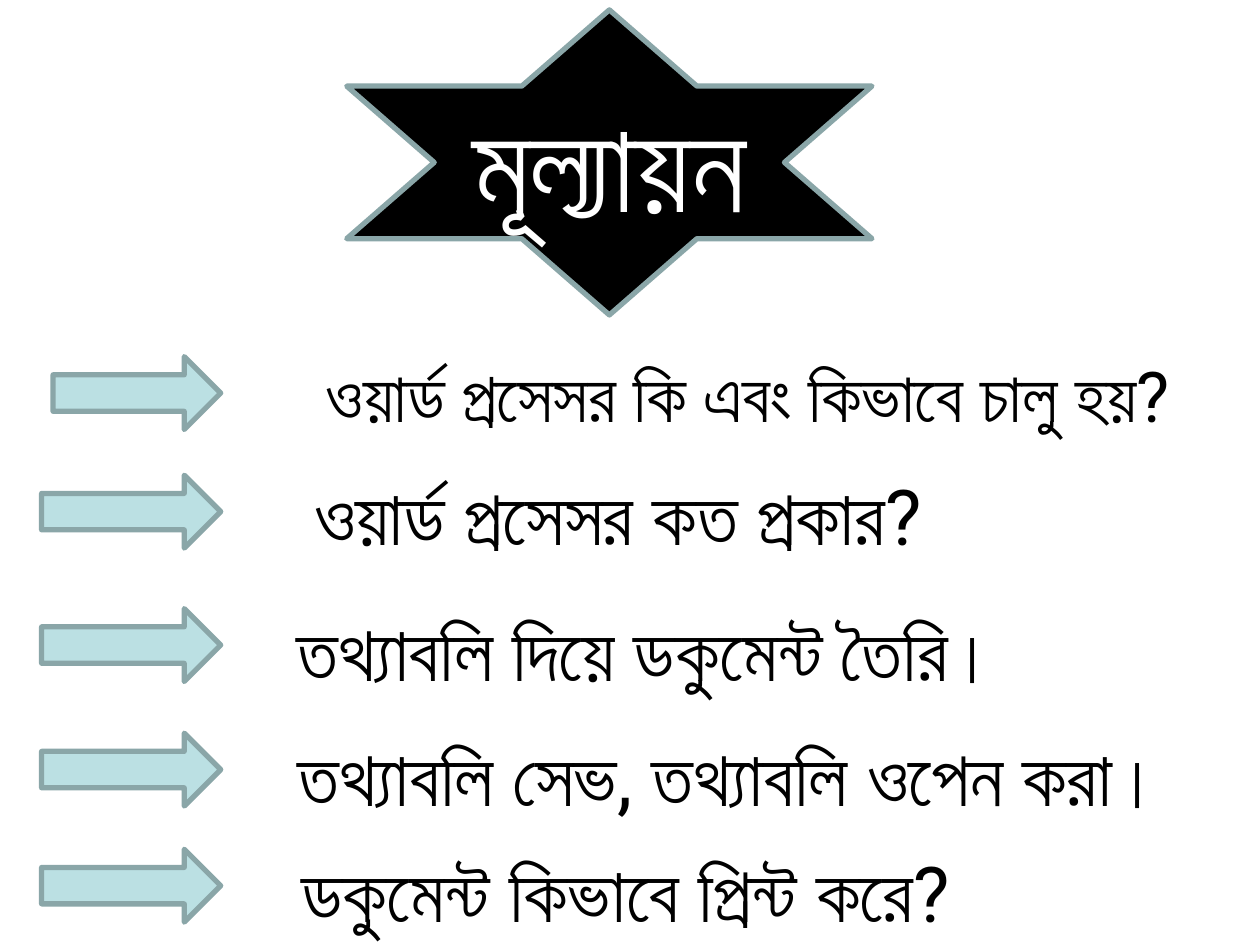
"""Build a Bengali evaluation slide with a star heading and five arrowed questions."""
from dataclasses import dataclass

import lxml.etree
import pptx
import pptx.dml.color
import pptx.enum.shapes
import pptx.enum.text
import pptx.oxml.ns
import pptx.util

Cm = pptx.util.Cm
Pt = pptx.util.Pt
SHAPE = pptx.enum.shapes.MSO_SHAPE
FONT = "Roboto"
BLACK, WHITE = "000000", "FFFFFF"
ARROW_FILL, OUTLINE = "BBE0E3", "8AA6A8"
ARROW_RIGHT, ARROW_HEIGHT = 4.45, 1.47


@dataclass
class Question:
    text: str
    left: float
    top: float
    width: float
    arrow_top: float
    height: float = 2.13
    size: int = 44
    arrow_left: float = 0.84


QUESTIONS = [
    Question("ওয়ার্ড প্রসেসর কি এবং কিভাবে চালু হয়?", 5.92, 6.99, 18.31, 7.19,
             height=1.96, size=40, arrow_left=1.07),
    Question("ওয়ার্ড প্রসেসর কত প্রকার?", 5.84, 9.32, 13.23, 9.58),
    Question("তথ্যাবলি দিয়ে ডকুমেন্ট তৈরি।", 5.64, 12.07, 14.86, 12.27),
    Question("তথ্যাবলি সেভ, তথ্যাবলি ওপেন করা।", 5.72, 14.58, 18.03, 14.78),
    Question("ডকুমেন্ট কিভাবে প্রিন্ট করে?", 5.51, 16.92, 14.2, 17.12),
]


def rgb(color: str) -> pptx.dml.color.RGBColor:
    return pptx.dml.color.RGBColor.from_string(color)


def add_text(tf, text: str, size: int, color: str) -> None:
    p = tf.paragraphs[0]
    p.alignment = pptx.enum.text.PP_ALIGN.CENTER
    r = p.add_run()
    r.text = text
    r.font.size = Pt(size)
    r.font.name = FONT
    r.font.color.rgb = rgb(color)
    cs = lxml.etree.SubElement(r.font._element, pptx.oxml.ns.qn("a:cs"))
    cs.set("typeface", FONT)


def add_outlined(s, kind, left: float, top: float, width: float, height: float, fill: str):
    sp = s.shapes.add_shape(kind, Cm(left), Cm(top), Cm(width), Cm(height))
    sp.shadow.inherit = False
    sp.fill.solid()
    sp.fill.fore_color.rgb = rgb(fill)
    sp.line.color.rgb = rgb(OUTLINE)
    sp.line.width = Pt(3)
    return sp


def add_question(s, q: Question) -> None:
    add_outlined(s, SHAPE.RIGHT_ARROW, q.arrow_left, q.arrow_top,
                 ARROW_RIGHT - q.arrow_left, ARROW_HEIGHT, ARROW_FILL)
    tf = s.shapes.add_textbox(Cm(q.left), Cm(q.top), Cm(q.width), Cm(q.height)).text_frame
    tf.word_wrap = False
    tf.auto_size = pptx.enum.text.MSO_AUTO_SIZE.SHAPE_TO_FIT_TEXT
    add_text(tf, q.text, q.size, BLACK)


def main() -> None:
    prs = pptx.Presentation()
    prs.slide_width, prs.slide_height = Cm(25.4), Cm(19.05)
    s = prs.slides.add_slide(prs.slide_layouts[6])
    star = add_outlined(s, SHAPE.STAR_6_POINT, 6.99, 0.2, 10.59, 6.15, BLACK)
    star.text_frame.vertical_anchor = pptx.enum.text.MSO_ANCHOR.MIDDLE
    add_text(star.text_frame, "মূল্যায়ন", 72, WHITE)
    for q in QUESTIONS:
        add_question(s, q)
    prs.save("out.pptx")


if __name__ == "__main__":
    main()
